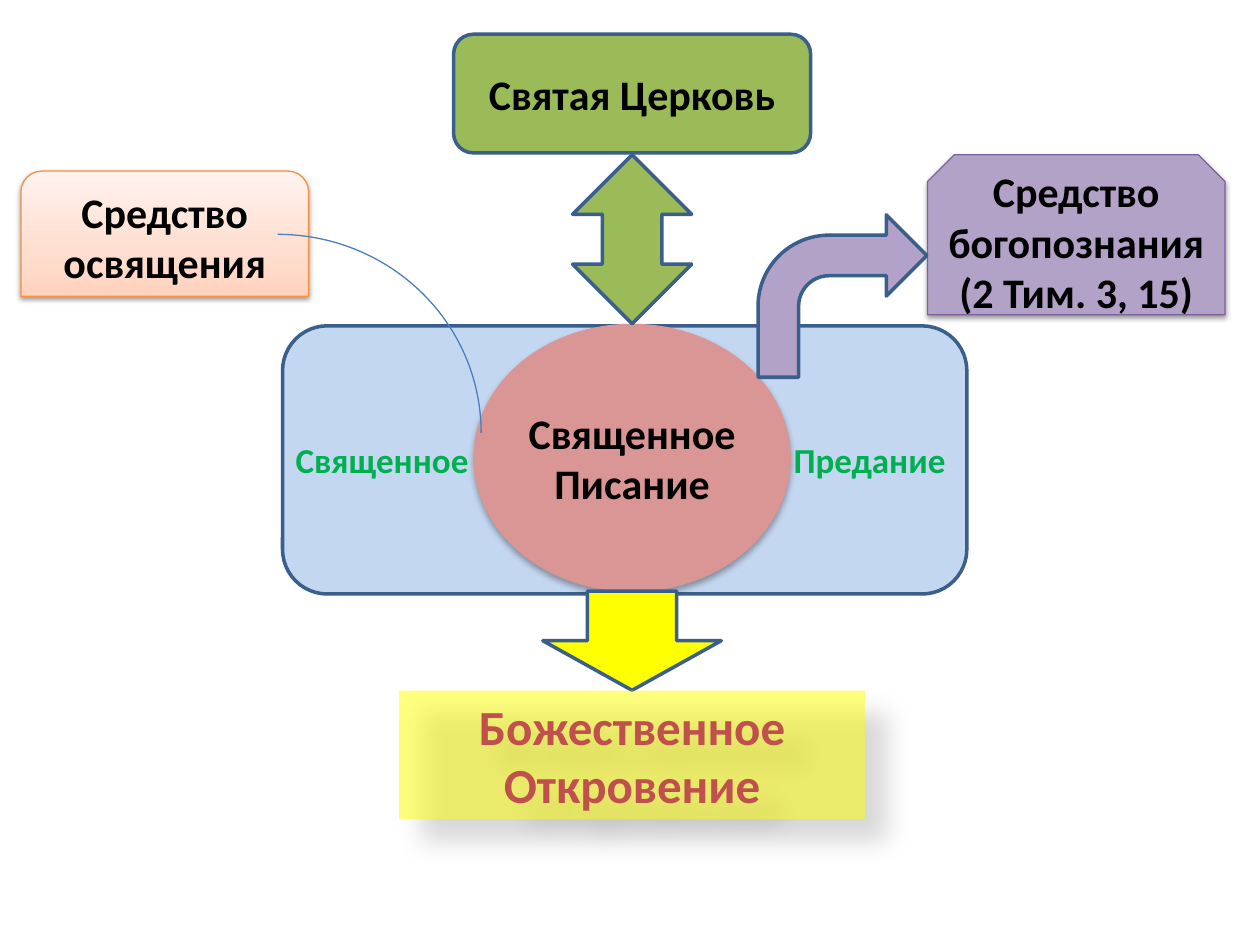
from copy import deepcopy
from dataclasses import dataclass
from typing import Optional

from lxml.etree import SubElement
from pptx import Presentation
from pptx.dml.color import RGBColor
from pptx.enum.shapes import MSO_SHAPE as KIND
from pptx.enum.text import MSO_ANCHOR, PP_ALIGN
from pptx.oxml.ns import qn
from pptx.util import Pt

HUES = {
    "green": "9BBB59", "sky": "8EB4E3", "rose": "D99694", "yellow": "FFFF00",
    "lilac": "B3A2C7", "plum": "7D60A0", "navy": "3A5F8C", "blue": "4B7EBC",
    "orange": "F69240", "black": "000000", "leaf": "00B050", "red": "C0504D",
    "peach": "FFD2BD", "cream": "FFDED0", "milk": "FFF2ED",
}
FONT = "Calibri"
AXIS = 361.2  # centre line of the main column


@dataclass
class Shade:
    alpha: int
    blur: float
    dist: float
    angle: int


@dataclass
class Label:
    text: str
    size: int = 24
    hue: str = "black"
    inset: float = 7.2
    tab: Optional[float] = None  # left-aligned with a tab stop when given


@dataclass
class Part:
    kind: KIND
    left: float
    top: float
    width: float
    height: float
    fill: tuple = ()  # several hues make a gradient
    alpha: int = 100
    line: Optional[str] = "navy"
    weight: float = 2
    shade: Optional[Shade] = None
    label: Optional[Label] = None


def tone(name: str) -> RGBColor:
    return RGBColor.from_string(HUES[name])


def paint(shape, part: Part) -> None:
    fill = shape.fill
    if not part.fill:
        fill.background()
    elif len(part.fill) == 1:
        fill.solid()
        fill.fore_color.rgb = tone(part.fill[0])
        if part.alpha < 100:
            color = shape._element.spPr.find(qn("a:solidFill"))[0]
            SubElement(color, qn("a:alpha"), val=str(part.alpha * 1000))
    else:
        fill.gradient()
        fill.gradient_angle = 90
        stops = shape._element.spPr.find(".//" + qn("a:gsLst"))
        stops.insert(1, deepcopy(stops[0]))
        for stop, (name, place) in zip(fill.gradient_stops, part.fill):
            stop.color.rgb = tone(name)
            stop.position = place


def cast(shape, shade: Shade) -> None:
    effects = shape._element.spPr.find(qn("a:effectLst"))
    outer = SubElement(
        effects, qn("a:outerShdw"), blurRad=str(Pt(shade.blur)),
        dist=str(Pt(shade.dist)), dir=str(shade.angle * 60000),
        algn="ctr", rotWithShape="0")
    color = SubElement(outer, qn("a:srgbClr"), val=HUES["black"])
    SubElement(color, qn("a:alpha"), val=str(shade.alpha * 1000))


def write(shape, label: Label) -> None:
    frame = shape.text_frame
    frame.word_wrap = True
    frame.vertical_anchor = MSO_ANCHOR.MIDDLE
    frame.margin_left = frame.margin_right = Pt(label.inset)
    line = frame.paragraphs[0]
    line.alignment = PP_ALIGN.CENTER if label.tab is None else PP_ALIGN.LEFT
    if label.tab is not None:
        tabs = SubElement(line._p.get_or_add_pPr(), qn("a:tabLst"))
        SubElement(tabs, qn("a:tab"), pos=str(Pt(label.tab)), algn="l")
    run = line.add_run()
    run.text = label.text
    run.font.name = FONT
    run.font.size = Pt(label.size)
    run.font.bold = True
    run.font.color.rgb = tone(label.hue)


def draw(slide, part: Part) -> None:
    shape = slide.shapes.add_shape(
        part.kind, Pt(part.left), Pt(part.top), Pt(part.width), Pt(part.height))
    shape.shadow.inherit = False
    paint(shape, part)
    if part.line:
        shape.line.color.rgb = tone(part.line)
        shape.line.width = Pt(part.weight)
    else:
        shape.line.fill.background()
    if part.shade:
        cast(shape, part.shade)
    if part.label:
        write(shape, part.label)


def column(kind: KIND, top: float, width: float, height: float, **rest) -> Part:
    """A part centred on the main axis."""
    return Part(kind, AXIS - width / 2, top, width, height, **rest)


SOFT = Shade(38, 3.1, 1.6, 90)
PARTS = [
    # Church
    column(KIND.ROUNDED_RECTANGLE, 19.6, 204, 67.8, fill=("green",),
           label=Label("Святая Церковь")),
    # Tradition, with Scripture at its heart
    Part(KIND.FLOWCHART_ALTERNATE_PROCESS, 161.5, 186.2, 391, 153.2,
         fill=("sky",), alpha=52,
         label=Label("Священное\tПредание", 20, "leaf", 0, 284.5)),
    column(KIND.OVAL, 185, 181.4, 153.2, fill=("rose",), line=None,
           shade=Shade(32, 3.5, 2.2, 90),
           label=Label("Священное Писание", inset=0)),
    # Arrows up to the Church and down to Revelation
    column(KIND.UP_DOWN_ARROW, 88.5, 68, 96.5, fill=("green",)),
    column(KIND.DOWN_ARROW, 337.8, 102, 56.7, fill=("yellow",)),
    # Revelation
    column(KIND.RECTANGLE, 394.6, 266.4, 73.6, fill=("yellow",), alpha=50,
           line=None, shade=Shade(30, 15, 18, 45),
           label=Label("Божественное Откровение", 28, "red")),
    # Knowledge of God
    Part(KIND.SNIP_2_SAME_RECTANGLE, 530, 88.5, 170, 91.4, fill=("lilac",),
         line="plum", weight=0.75, shade=SOFT,
         label=Label("Средство богопознания (2 Тим. 3, 15)", inset=2.9)),
    Part(KIND.BENT_ARROW, 433.2, 122.8, 96.5, 92.8, fill=("lilac",)),
    # Sanctification
    Part(KIND.ROUND_2_SAME_RECTANGLE, 12, 97.8, 164.4, 71.5,
         fill=(("peach", 0), ("cream", 0.35), ("milk", 1)),
         line="orange", weight=0.75, shade=SOFT,
         label=Label("Средство освящения")),
    Part(KIND.ARC, 42.5, 133.9, 232.5, 226.8, line="blue", weight=0.75),
]


def main() -> None:
    deck = Presentation()
    deck.slide_width, deck.slide_height = Pt(720), Pt(540)
    slide = deck.slides.add_slide(deck.slide_layouts[6])
    for part in PARTS:
        draw(slide, part)
    deck.save("out.pptx")


if __name__ == "__main__":
    main()
